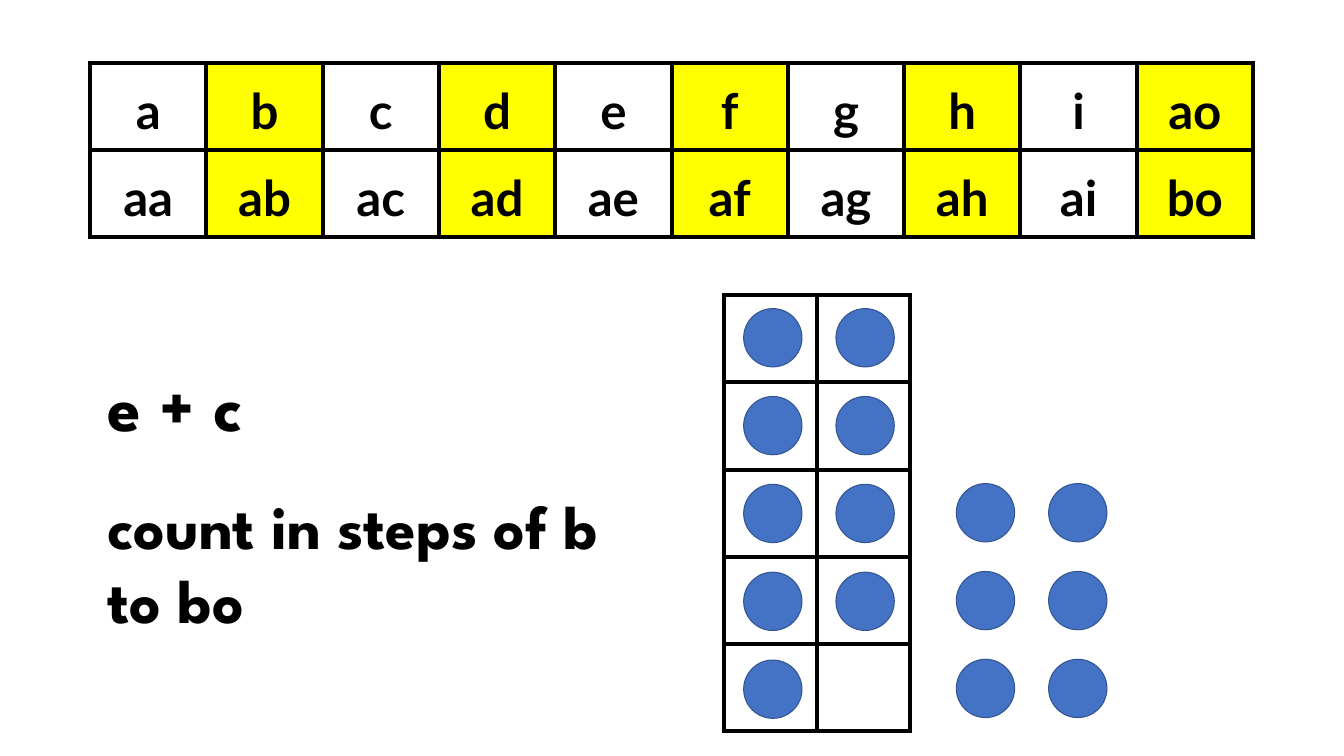
from dataclasses import dataclass

from lxml.etree import SubElement
from pptx import Presentation
from pptx.dml.color import RGBColor
from pptx.enum.shapes import MSO_SHAPE as Shape
from pptx.enum.text import MSO_AUTO_SIZE as Fit, PP_ALIGN as Align
from pptx.oxml.ns import qn
from pptx.util import Emu, Pt

SCALE = 9144
BLACK, WHITE, YELLOW = "000000", "FFFFFF", "FFFF00"
BLUE, NAVY = "4472C4", "325491"
DOT = 79
STEP_X, STEP_Y = 125, 119


@dataclass
class Grid:
    left: int
    top: int
    width: int
    height: int
    rows: list[list[str]]
    fills: list[str]


@dataclass
class Dots:
    left: int
    top: int
    count: int


@dataclass
class Line:
    text: str
    size: int
    after: int


GRIDS = [
    Grid(980, 400, 252, 590, [["", ""]] * 5, [WHITE]),
    Grid(122, 85, 1575, 236,
         [["a", "b", "c", "d", "e", "f", "g", "h", "i", "ao"],
          ["aa", "ab", "ac", "ad", "ae", "af", "ag", "ah", "ai", "bo"]],
         [WHITE, YELLOW]),
]
DOTS = [
    Dots(1007, 418, 5),
    Dots(1132, 418, 4),
    Dots(1295, 655, 3),
    Dots(1295 + STEP_X, 655, 3),
]
LINES = [Line("e + c", 66, 42), Line("count in steps of b to bo", 60, 12)]


def px(num: int) -> Emu:
    return Emu(num * SCALE)


def paint(item, tone: str) -> None:
    item.solid()
    item.fore_color.rgb = RGBColor.from_string(tone)


def style(para, name: str, size: int) -> None:
    font = para.font
    font.name, font.size, font.bold = name, Pt(size), True
    paint(font.fill, BLACK)


def frame(cell) -> None:
    props = cell._tc.get_or_add_tcPr()
    for side in ("lnL", "lnR", "lnT", "lnB"):
        edge = SubElement(props, qn(f"a:{side}"), w=str(Pt(4.5)))
        fill = SubElement(edge, qn("a:solidFill"))
        SubElement(fill, qn("a:srgbClr"), val=BLACK)


def draw_grid(slide, grid: Grid) -> None:
    table = slide.shapes.add_table(
        len(grid.rows), len(grid.rows[0]), px(grid.left), px(grid.top),
        px(grid.width), px(grid.height)).table
    table.first_row = table.horz_banding = False
    for r, row in enumerate(grid.rows):
        for c, text in enumerate(row):
            cell = table.cell(r, c)
            frame(cell)
            paint(cell.fill, grid.fills[c % len(grid.fills)])
            if text:
                cell.margin_left = cell.margin_right = px(7)
                cell.margin_top = cell.margin_bottom = 0
                para = cell.text_frame.paragraphs[0]
                para.text, para.alignment = text, Align.CENTER
                para.line_spacing = 1.3
                para.space_before, para.space_after = Pt(12), Pt(2)
                style(para, "Lato", 48)


def draw_dots(slide, dots: Dots) -> None:
    for i in range(dots.count):
        dot = slide.shapes.add_shape(
            Shape.OVAL, px(dots.left), px(dots.top + i * STEP_Y),
            px(DOT), px(DOT))
        dot.shadow.inherit = False
        paint(dot.fill, BLUE)
        paint(dot.line.fill, NAVY)
        dot.line.width = Pt(1)


def draw_text(slide, lines: list[Line]) -> None:
    box = slide.shapes.add_textbox(px(136), px(488), px(709), px(382))
    body = box.text_frame
    body.word_wrap, body.auto_size = True, Fit.SHAPE_TO_FIT_TEXT
    for i, line in enumerate(lines):
        para = body.add_paragraph() if i else body.paragraphs[0]
        para.text, para.space_after = line.text, Pt(line.after)
        style(para, "League Spartan", line.size)


def main() -> None:
    deck = Presentation()
    deck.slide_width, deck.slide_height = px(1820), px(1024)
    slide = deck.slides.add_slide(deck.slide_layouts[6])
    draw_text(slide, LINES)
    for grid in GRIDS:
        draw_grid(slide, grid)
    for dots in DOTS:
        draw_dots(slide, dots)
    deck.save("out.pptx")


if __name__ == "__main__":
    main()
